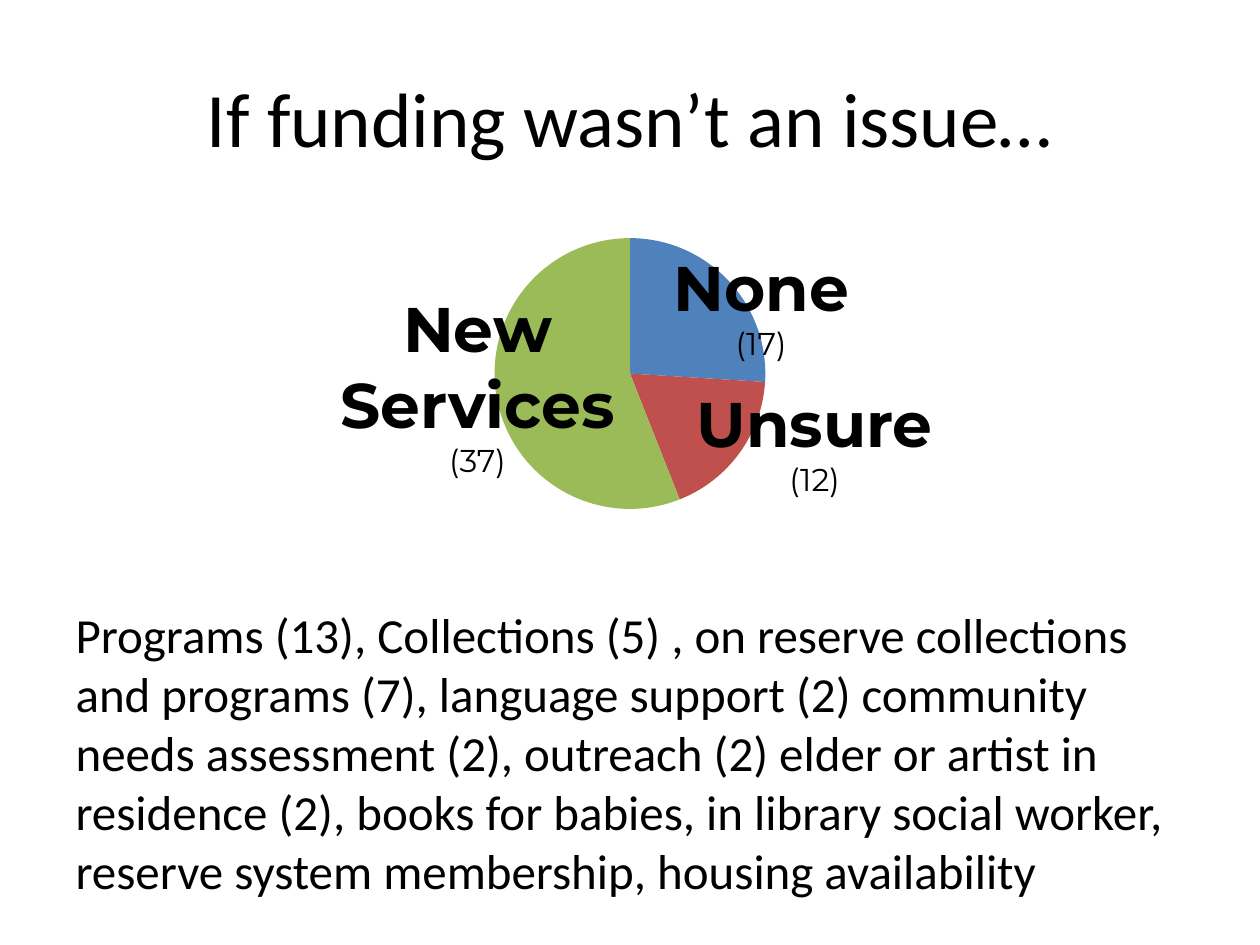
"""Build a slide with a labelled pie chart of funding answers above a paragraph."""
from lxml import etree
from pptx import Presentation
from pptx.chart.data import CategoryChartData
from pptx.dml.color import RGBColor
from pptx.enum import chart as charts, text
from pptx.oxml.ns import qn
from pptx.util import Inches, Pt

WIDE, HIGH = 10, 7.5
EDGE = 0.05 * WIDE
TITLE = "If funding wasn’t an issue…"
BODY = (
    "Programs (13), Collections (5) , on reserve collections and programs (7), "
    "language support (2) community needs assessment (2), outreach (2) elder or "
    "artist in residence (2), books for babies, in library social worker, "
    "reserve system membership, housing availability"
)
SHARES = [("1", 26, "4F81BD"), ("2", 18, "C0504D"), ("3", 56, "9BBB59")]
LABELS = [
    ("None", "(17)", (5.08, 1.92, 1.92, 1.01)),
    ("Unsure", "(12)", (5.34, 3, 2.25, 1.01)),
    ("New Services", "(37)", (2.25, 2.25, 3.08, 1.62)),
]
CHART = (EDGE, 1.75, WIDE - 2 * EDGE, 2.43)
PIE = 2.15


def color(code):
    return RGBColor.from_string(code)


def place(shape, box):
    shape.left, shape.top, shape.width, shape.height = map(Inches, box)


def write(para, words, size, face="Calibri", bold=None):
    run = para.add_run()
    run.text = words
    font = run.font
    font.size, font.name, font.bold = Pt(size), face, bold
    font.color.rgb = color("000000")


def add_pie(slide):
    data = CategoryChartData()
    data.categories = [name for name, _, _ in SHARES]
    data.add_series("Series 1", [value for _, value, _ in SHARES])
    chart = slide.shapes.add_chart(
        charts.XL_CHART_TYPE.PIE, *map(Inches, CHART), data).chart
    chart.has_legend = chart.has_title = False
    chart.font.name, chart.font.size = "Calibri", Pt(18)
    chart.font.color.rgb = color("000000")
    plot = chart.plots[0]
    plot.vary_by_categories = True
    for i, (_, _, code) in enumerate(SHARES):
        fill = plot.series[0].points[i].format.fill
        fill.solid()
        fill.fore_color.rgb = color(code)
    area = chart.element.find(".//" + qn("c:plotArea"))
    for old in area.findall(qn("c:layout")):
        area.remove(old)
    layout = etree.Element(qn("c:layout"))
    area.insert(0, layout)
    manual = etree.SubElement(layout, qn("c:manualLayout"))
    wide, high = PIE / CHART[2], PIE / CHART[3]
    for tag, value in [("layoutTarget", "inner"), ("xMode", "edge"),
                       ("yMode", "edge"), ("x", (1 - wide) / 2),
                       ("y", (1 - high) / 2), ("w", wide), ("h", high)]:
        etree.SubElement(manual, qn("c:" + tag)).set("val", str(value))


def add_label(slide, name, count, box):
    frame = slide.shapes.add_textbox(*map(Inches, box)).text_frame
    frame.word_wrap = True
    frame.auto_size = text.MSO_AUTO_SIZE.SHAPE_TO_FIT_TEXT
    head, foot = frame.paragraphs[0], frame.add_paragraph()
    head.alignment = foot.alignment = text.PP_ALIGN.CENTER
    write(head, name, 36, "Montserrat", True)
    write(foot, count, 18, "Montserrat", False)


def main():
    deck = Presentation()
    deck.slide_width, deck.slide_height = Inches(WIDE), Inches(HIGH)
    slide = deck.slides.add_slide(deck.slide_layouts[1])
    title, body = slide.placeholders
    place(title, (EDGE, 0.3, WIDE - 2 * EDGE, 1.25))
    write(title.text_frame.paragraphs[0], TITLE, 44)
    add_pie(slide)
    for label in LABELS:
        add_label(slide, *label)
    place(body, (EDGE, 4.75, WIDE - 2 * EDGE, 2.42))
    body.text_frame.auto_size = text.MSO_AUTO_SIZE.NONE
    para = body.text_frame.paragraphs[0]
    write(para, BODY, 28)
    props = para._p.get_or_add_pPr()
    props.set("marL", "0")
    props.set("indent", "0")
    etree.SubElement(props, qn("a:buNone"))
    deck.save("out.pptx")


if __name__ == "__main__":
    main()
